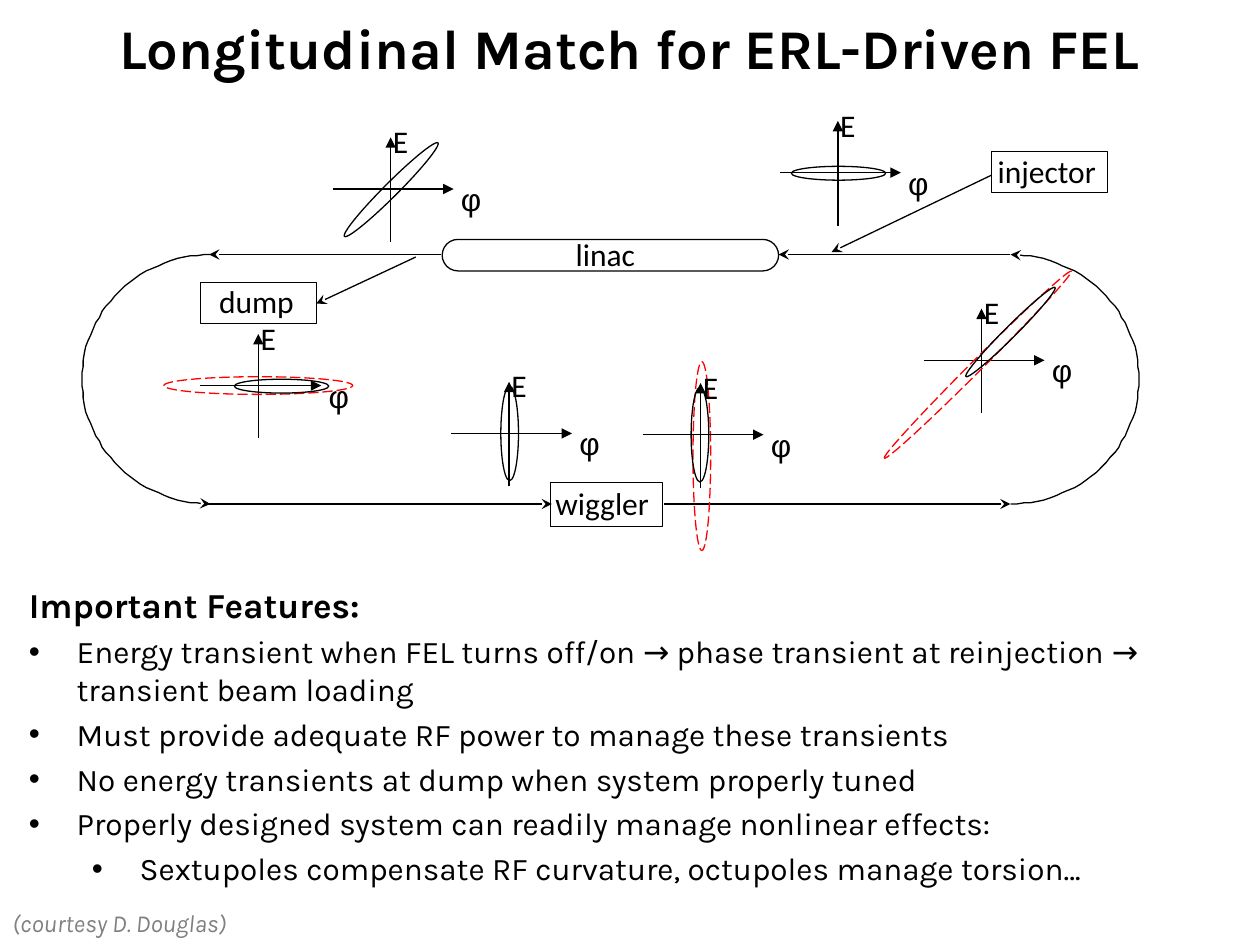
import dataclasses
import math

import pptx
import pptx.dml.color
import pptx.enum.dml
import pptx.enum.shapes
import pptx.enum.text
import pptx.oxml.ns
import pptx.util
from lxml import etree

PX = 9144  # 100 px to the inch
BLACK = pptx.dml.color.RGBColor(0, 0, 0)
RED = pptx.dml.color.RGBColor(255, 0, 0)
GRAY = pptx.dml.color.RGBColor(128, 128, 128)
KIND = pptx.enum.shapes.MSO_SHAPE


@dataclasses.dataclass
class Oval:
    x: int
    y: int
    w: int
    h: int
    turn: int = 0
    red: bool = False


@dataclasses.dataclass
class Plot:
    """Phase-space axes crossing at x, y, with the beam ovals on them."""
    x: int
    y: int
    ovals: list[Oval]


@dataclasses.dataclass
class Label:
    text: str
    x: int
    y: int
    w: int
    h: int = 40
    size: int = 18
    face: str = "Calibri"


@dataclasses.dataclass
class Item:
    text: str
    level: int = 0


PLOTS = [
    Plot(665, 137, [Oval(628, 132, 75, 11)]),
    Plot(404, 344, [Oval(367, 337, 75, 14, 90)]),
    Plot(310, 150, [Oval(258, 145, 105, 11, 315)]),
    Plot(205, 306, [Oval(130, 299, 150, 14, 0, True), Oval(186, 301, 75, 11)]),
    Plot(779, 286, [Oval(671, 285, 210, 9, 315, True),
                    Oval(752, 259, 100, 9, 315)]),
    Plot(556, 345, [Oval(518, 338, 75, 14, 90)]),
]
BEAMS = [
    (787, 139, 660, 200),
    (330, 204, 251, 241),
    (350, 202, 166, 202),
    (163, 400, 438, 400),
    (802, 202, 618, 202),
    (527, 400, 802, 400),
]
BOXES = [(787, 120, 92, 33), (437, 383, 89, 35), (159, 224, 92, 33)]
LABELS = [
    Label("injector", 782, 116, 101),
    Label("dump", 164, 219, 83),
    Label("wiggler", 431, 379, 99),
    Label("linac", 447, 182, 72),
]
ITEMS = [
    Item("Energy transient when FEL turns off/on → phase transient at "
         "reinjection → transient beam loading"),
    Item("Must provide adequate RF power to manage these transients"),
    Item("No energy transients at dump when system properly tuned"),
    Item("Properly designed system can readily manage nonlinear effects:"),
    Item("Sextupoles compensate RF curvature, octupoles manage torsion…", 1),
]


def add(parent, tag: str, **attrs: str):
    return etree.SubElement(parent, pptx.oxml.ns.qn(tag), attrs)


def stroke(shape, color=BLACK, tip: str = "", end: str = "a:tailEnd") -> None:
    shape.line.color.rgb = color
    shape.line.width = pptx.util.Pt(0.75)
    if tip:
        add(shape.line._get_or_add_ln(), end, type=tip)


def draw_line(shapes, x1: int, y1: int, x2: int, y2: int, tip: str) -> None:
    line = shapes.add_connector(pptx.enum.shapes.MSO_CONNECTOR.STRAIGHT,
                                x1 * PX, y1 * PX, x2 * PX, y2 * PX)
    stroke(line, tip=tip)
    add(line._element.spPr, "a:effectLst")


def draw_shape(shapes, kind, x: int, y: int, w: int, h: int, color=BLACK):
    shape = shapes.add_shape(kind, x * PX, y * PX, w * PX, h * PX)
    shape.shadow.inherit = False
    shape.fill.background()
    stroke(shape, color)
    return shape


def style(para, size: int, face: str, color=BLACK) -> None:
    for run in para.runs:
        run.font.size = pptx.util.Pt(size)
        run.font.name = face
        run.font.color.rgb = color


def draw_text(shapes, label: Label, color=BLACK, wrap: bool = False):
    box = shapes.add_textbox(label.x * PX, label.y * PX,
                             label.w * PX, label.h * PX)
    frame = box.text_frame
    frame.word_wrap = wrap
    frame.text = label.text
    style(frame.paragraphs[0], label.size, label.face, color)
    return frame


def draw_oval(shapes, oval: Oval) -> None:
    shape = draw_shape(shapes, KIND.OVAL, oval.x, oval.y, oval.w, oval.h,
                       RED if oval.red else BLACK)
    shape.rotation = oval.turn
    if oval.red:
        shape.line.dash_style = pptx.enum.dml.MSO_LINE.LONG_DASH


def draw_plot(shapes, plot: Plot) -> None:
    group = shapes.add_group_shape().shapes
    x, y = plot.x, plot.y
    draw_line(group, x, y + 42, x, y - 41, "triangle")
    draw_line(group, x - 46, y, x + 50, y, "triangle")
    draw_text(group, Label("E", x - 8, y - 58, 22), wrap=True)
    draw_text(group, Label("φ", x + 46, y - 12, 22, face="Arial"), wrap=True)
    for oval in plot.ovals:
        draw_oval(group, oval)


def draw_bend(shapes, x: int, side: int, end: str) -> None:
    """Draw a half-circle arc from top to bottom, bulging to one side."""
    steps = 60
    spots = [(x + side * 102 * math.sin(math.pi * i / steps),
              301 - 99 * math.cos(math.pi * i / steps))
             for i in range(steps + 1)]
    pen = shapes.build_freeform(*spots[0], scale=PX)
    pen.add_line_segments(spots[1:], close=False)
    bend = pen.convert_to_shape()
    bend.shadow.inherit = False
    bend.fill.background()
    stroke(bend, tip="stealth", end=end)


def indent(para, level: int, bullet: bool) -> None:
    para.level = level
    para.space_before = pptx.util.Pt(4)
    props = para._p.get_or_add_pPr()
    props.set("marL", str((38 + 50 * level) * PX))
    props.set("indent", str(-38 * PX))
    if bullet:
        add(props, "a:buFont", typeface="Arial")
        add(props, "a:buChar", char="•")


def draw_list(shapes) -> None:
    frame = draw_text(shapes, Label("Important Features:", 13, 458, 975, 283,
                                    20, "Karla"), wrap=True)
    head = frame.paragraphs[0]
    head.runs[0].font.bold = True
    indent(head, 0, False)
    for item in ITEMS:
        para = frame.add_paragraph()
        para.text = item.text
        style(para, 18, "Karla")
        indent(para, item.level, True)


def main() -> None:
    deck = pptx.Presentation()
    deck.slide_width, deck.slide_height = 1000 * PX, 750 * PX
    shapes = deck.slides.add_slide(deck.slide_layouts[6]).shapes

    title = draw_text(shapes, Label("Longitudinal Match for ERL-Driven FEL",
                                    17, 0, 966, 75, 32, "Karla"), wrap=True)
    title.vertical_anchor = pptx.enum.text.MSO_ANCHOR.MIDDLE
    title.paragraphs[0].alignment = pptx.enum.text.PP_ALIGN.CENTER
    title.paragraphs[0].runs[0].font.bold = True

    linac = draw_shape(shapes, KIND.ROUNDED_RECTANGLE, 351, 190, 267, 25)
    linac.adjustments[0] = 0.5
    for beam in BEAMS:
        draw_line(shapes, *beam, "stealth")
    draw_bend(shapes, 167, -1, "a:tailEnd")
    draw_bend(shapes, 802, 1, "a:headEnd")
    for box in BOXES:
        draw_shape(shapes, KIND.RECTANGLE, *box)
    for label in LABELS:
        draw_text(shapes, label)
    draw_list(shapes)
    draw_oval(shapes, Oval(482, 355, 150, 14, 90, True))
    for plot in PLOTS:
        draw_plot(shapes, plot)

    credit = draw_text(shapes, Label("(courtesy D. Douglas)", 0, 716, 209, 34,
                                     14, "Karla"), GRAY)
    credit.paragraphs[0].runs[0].font.italic = True
    deck.save("out.pptx")


if __name__ == "__main__":
    main()
